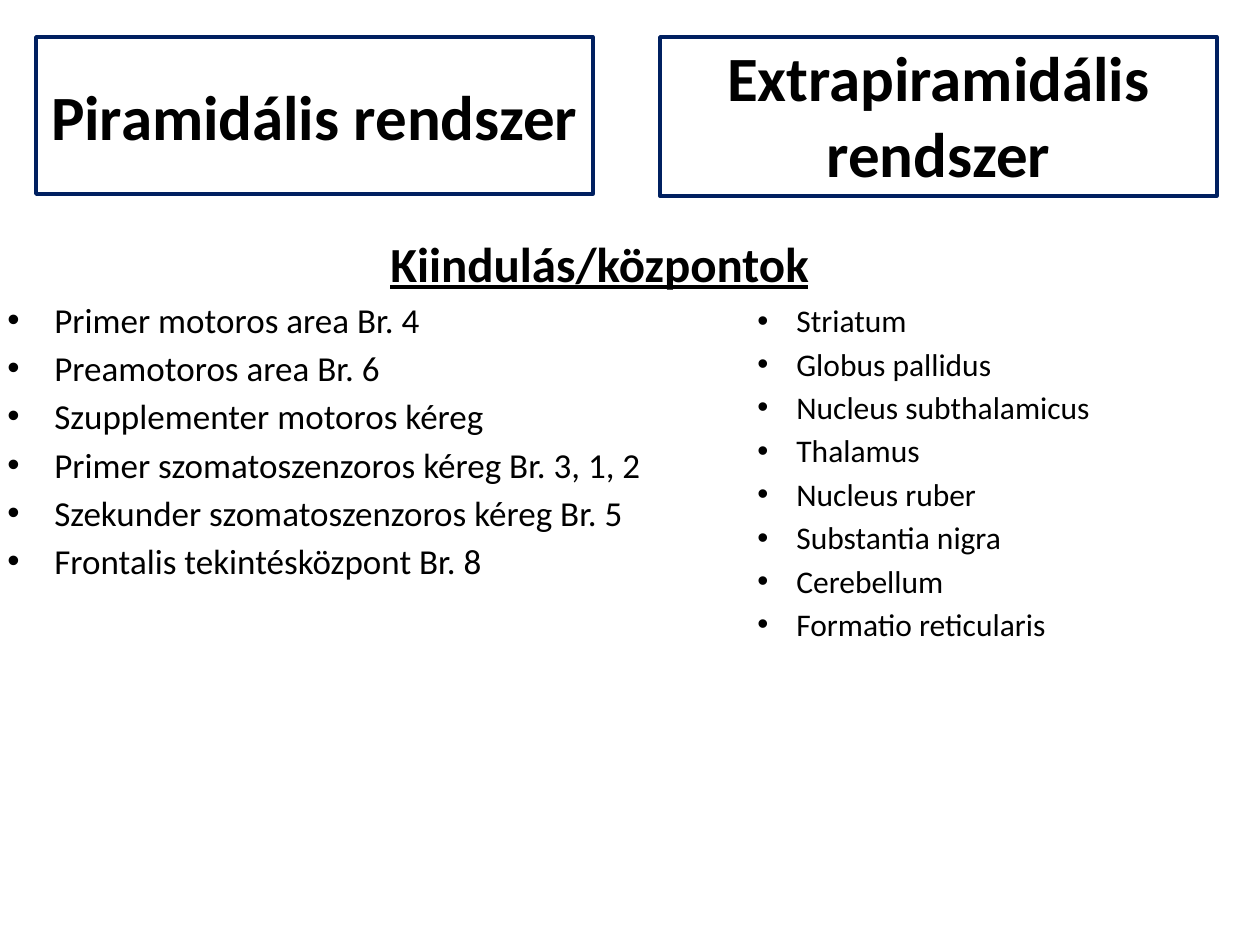
from dataclasses import dataclass

from lxml.etree import SubElement
from pptx import Presentation
from pptx.dml.color import RGBColor as RGB
from pptx.enum.shapes import MSO_SHAPE as Shape
from pptx.enum.text import MSO_ANCHOR as Anchor, PP_ALIGN as Align
from pptx.oxml.ns import qn
from pptx.util import Pt


@dataclass(frozen=True)
class Theme:
    font: str = "Calibri"
    ink: RGB = RGB(0, 0, 0)
    edge: RGB = RGB(0x00, 0x20, 0x60)
    title: int = 36
    head: int = 28
    left: int = 20
    right: int = 18
    gap: float = 0.18  # space before, as a share of the type size


THEME = Theme()


def px(n):
    return round(n * 914400 / 126)


def box(x, y, w, h):
    return px(x), px(y), px(w), px(h)


def add_run(para, text, size, bold=False, line=False):
    run = para.add_run()
    run.text = text
    font = run.font
    font.name, font.size = THEME.font, Pt(size)
    font.color.rgb = THEME.ink
    if bold:
        font.bold = True
    if line:
        font.underline = True


def indent(para, left, hang=0):
    props = para._p.get_or_add_pPr()
    props.set("marL", str(px(left)))
    props.set("indent", str(-px(hang)))
    return props


def add_title(slide, area, text, anchor):
    shape = slide.shapes.add_shape(Shape.RECTANGLE, *area)
    shape.shadow.inherit = False
    shape.fill.background()
    shape.line.color.rgb = THEME.edge
    shape.line.width = Pt(2)
    frame = shape.text_frame
    frame.word_wrap = True
    frame.vertical_anchor = anchor
    para = frame.paragraphs[0]
    para.alignment = Align.CENTER
    add_run(para, text, THEME.title, bold=True)


def add_head(slide, area, text):
    frame = slide.shapes.add_textbox(*area).text_frame
    frame.word_wrap = True
    para = frame.paragraphs[0]
    indent(para, 63)
    add_run(para, text, THEME.head, bold=True, line=True)


def add_list(slide, area, items, size, hang):
    frame = slide.shapes.add_textbox(*area).text_frame
    frame.word_wrap = True
    for i, item in enumerate(items):
        para = frame.add_paragraph() if i else frame.paragraphs[0]
        if i:
            para.space_before = Pt(round(size * THEME.gap, 1))
        props = indent(para, 63 + hang, hang)
        SubElement(props, qn("a:buFont"), typeface="Arial")
        SubElement(props, qn("a:buChar"), char="•")
        add_run(para, item, size)


def main():
    deck = Presentation()
    deck.slide_width, deck.slide_height = px(1260), px(945)
    slide = deck.slides.add_slide(deck.slide_layouts[6])

    # Titles of the two systems
    add_title(slide, box(36, 37, 557, 157), "Piramidális rendszer", Anchor.MIDDLE)
    add_title(slide, box(660, 37, 557, 159), "Extrapiramidális rendszer", Anchor.BOTTOM)

    # Shared heading
    add_head(slide, box(315, 227, 524, 59), "Kiindulás/központok")

    # Centres of each system
    add_list(slide, box(-68, 292, 765, 84), [
        "Primer motoros area Br. 4",
        "Preamotoros area Br. 6",
        "Szupplementer motoros kéreg",
        "Primer szomatoszenzoros kéreg Br. 3, 1, 2",
        "Szekunder szomatoszenzoros kéreg Br. 5",
        "Frontalis tekintésközpont Br. 8",
    ], THEME.left, 47)
    add_list(slide, box(682, 295, 587, 84), [
        "Striatum",
        "Globus pallidus",
        "Nucleus subthalamicus",
        "Thalamus",
        "Nucleus ruber",
        "Substantia nigra",
        "Cerebellum",
        "Formatio reticularis",
    ], THEME.right, 39)

    deck.save("out.pptx")


if __name__ == "__main__":
    main()
